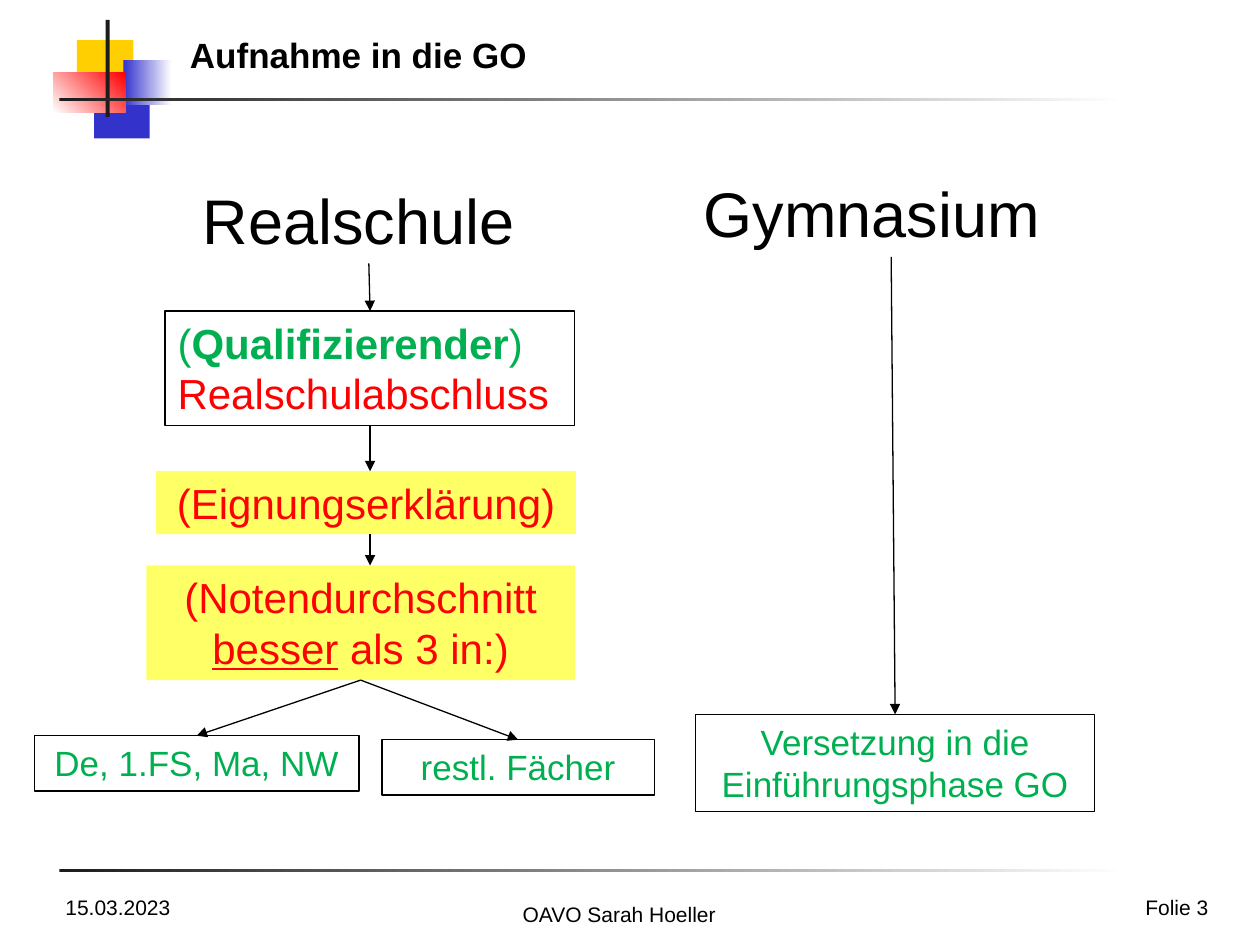
from dataclasses import dataclass

from lxml import etree
from pptx import Presentation
from pptx.dml.color import RGBColor
from pptx.enum.shapes import MSO_CONNECTOR as CONN, MSO_SHAPE as SHAPE
from pptx.enum.text import MSO_ANCHOR as ANCHOR, PP_ALIGN as ALIGN
from pptx.oxml.ns import qn
from pptx.util import Cm, Pt


@dataclass(frozen=True)
class Theme:
    font: str = "Arial"
    black: str = "000000"
    white: str = "FFFFFF"
    ink: str = "1C1C1C"
    gold: str = "FFCF01"
    blue: str = "3333CC"
    red: str = "FF0000"
    green: str = "00B050"
    yellow: str = "FFFF66"
    small: int = 12
    medium: int = 20
    large: int = 24
    heading: int = 36
    line: float = 0.75


T = Theme()


class SlideBuilder:
    def __init__(self, prs, theme):
        self.theme = theme
        self.s = prs.slides.add_slide(prs.slide_layouts[6])

    def block(self, at, *colors, angle=0):
        """Rectangle in one colour, or a gradient between two."""
        sp = self.s.shapes.add_shape(SHAPE.RECTANGLE, *map(Cm, at))
        sp.shadow.inherit = False
        sp.line.fill.background()
        if len(colors) == 1:
            sp.fill.solid()
            sp.fill.fore_color.rgb = RGBColor.from_string(colors[0])
        else:
            sp.fill.gradient()
            sp.fill.gradient_angle = angle
            for stop, color in zip(sp.fill.gradient_stops, colors):
                stop.color.rgb = RGBColor.from_string(color)
        return sp

    def text(self, at, runs, size, align=ALIGN.LEFT, anchor=ANCHOR.TOP,
             fill=None, border=False):
        """Text box; each run is (text, colour, format values)."""
        sp = self.s.shapes.add_textbox(*map(Cm, at))
        if fill:
            sp.fill.solid()
            sp.fill.fore_color.rgb = RGBColor.from_string(fill)
        if border:
            sp.line.color.rgb = RGBColor.from_string(self.theme.black)
            sp.line.width = Pt(self.theme.line)
        tf = sp.text_frame
        tf.word_wrap = True
        tf.vertical_anchor = anchor
        p = tf.paragraphs[0]
        p.alignment = align
        for text, color, extra in runs:
            if text == "\n":
                p.add_line_break()
                continue
            r = p.add_run()
            r.text = text
            r.font.color.rgb = RGBColor.from_string(color)
            values = {"name": self.theme.font, "size": Pt(size), **extra}
            for name, value in values.items():
                setattr(r.font, name, value)
        return sp

    def arrow(self, upper, lower, x1=None, x2=None):
        """Arrow from the bottom of one box to the top of another."""
        x1 = Cm(x1) if x1 else upper.left + upper.width // 2
        x2 = Cm(x2) if x2 else lower.left + lower.width // 2
        c = self.s.shapes.add_connector(
            CONN.STRAIGHT, x1, upper.top + upper.height, x2, lower.top)
        c.line.color.rgb = RGBColor.from_string(self.theme.black)
        c.line.width = Pt(self.theme.line)
        etree.SubElement(c.line._get_or_add_ln(), qn("a:tailEnd"), type="triangle")
        etree.SubElement(c._element.spPr, qn("a:effectLst"))


def plain(text, color=T.black, **extra):
    return [(text, color, extra)]


def main():
    prs = Presentation()
    prs.slide_width, prs.slide_height = Cm(25.4), Cm(19.05)
    b = SlideBuilder(prs, T)

    # Corner ornament and rules
    b.block((1.55, 0.81, 1.14, 0.89), T.gold)
    b.block((1.9, 1.9, 1.12, 0.89), T.blue)
    b.block((2.49, 1.22, 0.97, 0.89), T.blue, T.white)
    b.block((1.07, 1.47, 1.47, 0.79), T.white, T.red, angle=45)
    b.block((2.13, 0.4, 0.08, 1.96), T.ink)
    for top in (1.98, 17.52):
        b.block((1.2, top, 21.5, 0.06), T.ink, T.white)

    # Footer and title
    b.text((18.69, 17.9, 5.92, 0.56), plain("Folie 3"), T.small, ALIGN.RIGHT)
    b.text((1.07, 17.9, 5.92, 0.76), plain("15.03.2023"), T.small)
    b.text((8.46, 18.04, 8.05, 0.6), plain("OAVO Sarah Hoeller"), T.small, ALIGN.CENTER)
    b.text((3.58, 0.79, 18.26, 0.86), plain("Aufnahme in die GO", bold=True),
           T.medium, anchor=ANCHOR.BOTTOM, fill=T.white)

    # Column headings
    real = b.text((3.84, 3.53, 7.19, 1.78), plain("Realschule"), T.heading)
    gym = b.text((13.94, 3.4, 8.05, 1.78), plain("Gymnasium"), T.heading)

    # Outcomes and degree, outlined
    outlined = {"align": ALIGN.CENTER, "border": True}
    promotion = b.text((14.02, 14.4, 8.05, 1.96),
                       plain("Versetzung in die Einführungsphase GO", T.green),
                       T.medium, **outlined)
    degree = b.text((3.33, 6.27, 8.26, 2.31), [
        ("(", T.green, {}),
        ("Qualifizierender", T.green, {"bold": True}),
        (")", T.green, {}),
        ("\n", T.green, {}),
        ("Realschulabschluss", T.red, {}),
    ], T.large, border=True)
    core = b.text((0.69, 14.83, 6.55, 1.12), plain("De, 1.FS, Ma, NW", T.green),
                  T.medium, **outlined)
    other = b.text((7.7, 14.91, 5.49, 1.12), plain("restl. Fächer", T.green),
                   T.medium, **outlined)

    # Conditions, highlighted
    marked = {"align": ALIGN.CENTER, "fill": T.yellow}
    average = b.text((2.95, 11.4, 8.64, 2.31), [
        ("(Notendurchschnitt ", T.red, {}),
        ("besser", T.red, {"underline": True}),
        (" als 3 in:)", T.red, {}),
    ], T.large, **marked)
    suitability = b.text((3.15, 9.5, 8.46, 1.27),
                         plain("(Eignungserklärung)", T.red), T.large, **marked)

    # Arrows
    axis = 7.46
    b.arrow(gym, promotion)
    b.arrow(average, other)
    b.arrow(average, core)
    b.arrow(real, degree)
    b.arrow(degree, suitability, x2=axis)
    b.arrow(suitability, average, x1=axis, x2=axis)

    prs.save("out.pptx")


if __name__ == "__main__":
    main()
